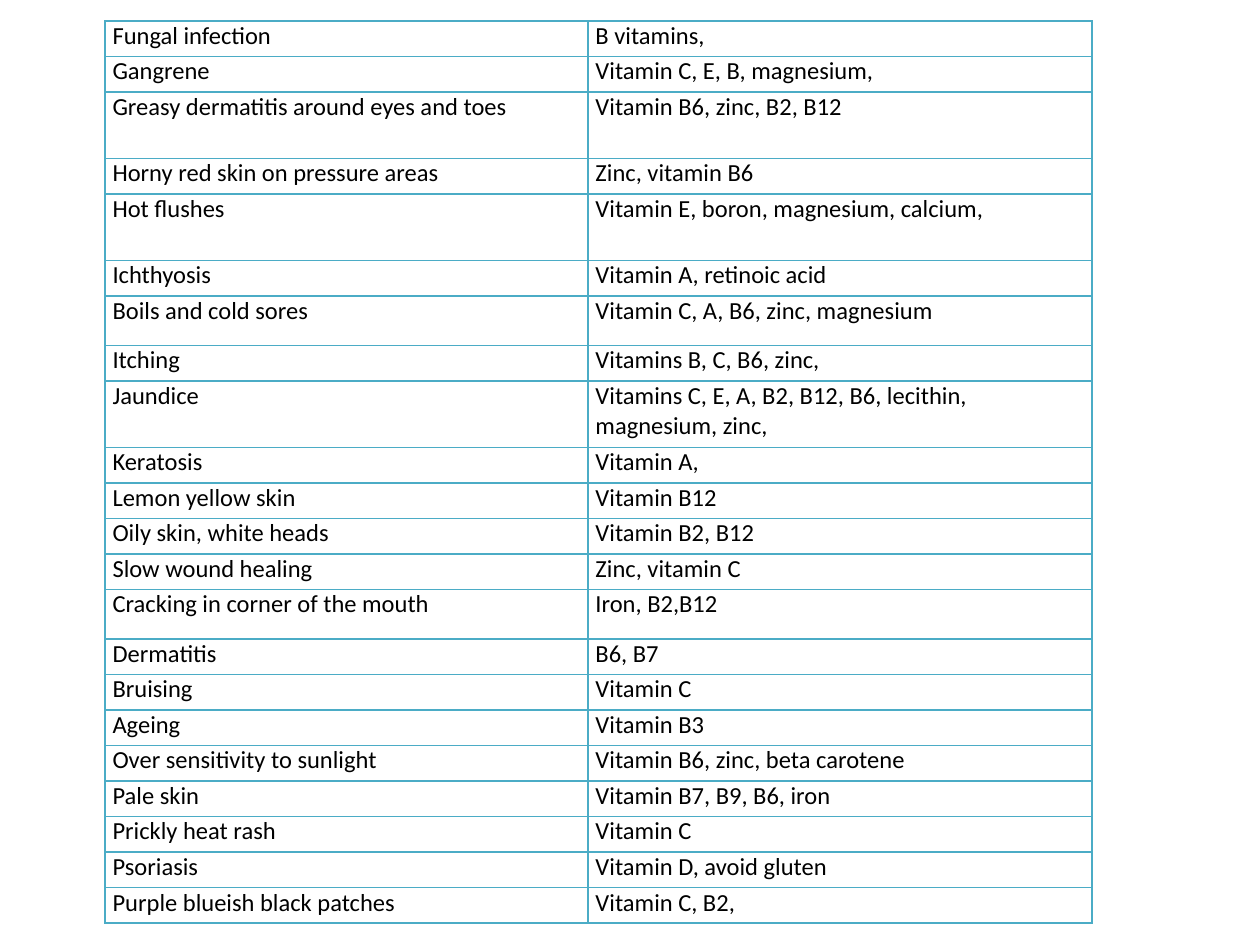
from lxml import etree
from pptx import Presentation
from pptx.dml.color import RGBColor
from pptx.enum.text import MSO_ANCHOR
from pptx.oxml.ns import qn
from pptx.util import Pt

TOP = MSO_ANCHOR.TOP

COLORS = {"text": "000000", "border": "4BACC6"}
FONT = "Calibri"
FONT_SIZE = 14
SIDE_MARGIN = 4.3
COLUMN_WIDTHS = [276, 288]
LOW, MID, TALL = 20.3, 28.3, 38  # row heights

# Condition, nutrients, row height
ROWS = [
    ("Fungal infection", "B vitamins,", LOW),
    ("Gangrene", "Vitamin C, E, B, magnesium,", LOW),
    ("Greasy dermatitis around eyes and toes", "Vitamin B6, zinc, B2, B12", TALL),
    ("Horny red skin on pressure areas", "Zinc, vitamin B6", LOW),
    ("Hot flushes", "Vitamin E, boron, magnesium, calcium,", TALL),
    ("Ichthyosis", "Vitamin A, retinoic acid", LOW),
    ("Boils and cold sores", "Vitamin C, A, B6, zinc, magnesium", MID),
    ("Itching", "Vitamins B, C, B6, zinc,", LOW),
    ("Jaundice", "Vitamins C, E, A, B2, B12, B6, lecithin, magnesium, zinc,", TALL),
    ("Keratosis", "Vitamin A,", LOW),
    ("Lemon yellow skin", "Vitamin B12", LOW),
    ("Oily skin, white heads", "Vitamin B2, B12", LOW),
    ("Slow wound healing", "Zinc, vitamin C", LOW),
    ("Cracking in corner of the mouth", "Iron, B2,B12", MID),
    ("Dermatitis", "B6, B7", LOW),
    ("Bruising", "Vitamin C", LOW),
    ("Ageing", "Vitamin B3", LOW),
    ("Over sensitivity to sunlight", "Vitamin B6, zinc, beta carotene", LOW),
    ("Pale skin", "Vitamin B7, B9, B6, iron", LOW),
    ("Prickly heat rash", "Vitamin C", LOW),
    ("Psoriasis", "Vitamin D, avoid gluten", LOW),
    ("Purple blueish black patches", "Vitamin C, B2,", LOW),
]


def set_borders(cell, color, width):
    """Draw all four cell borders; they must precede the fill in the XML."""
    tcPr = cell._tc.get_or_add_tcPr()
    for i, side in enumerate(("a:lnL", "a:lnR", "a:lnT", "a:lnB")):
        ln = etree.Element(qn(side), w=str(Pt(width)))
        fill = etree.SubElement(ln, qn("a:solidFill"))
        etree.SubElement(fill, qn("a:srgbClr"), val=color)
        tcPr.insert(i, ln)


def fill_cell(cell, text):
    cell.margin_left = cell.margin_right = Pt(SIDE_MARGIN)
    cell.margin_top = cell.margin_bottom = 0
    cell.vertical_anchor = TOP
    cell.fill.background()
    set_borders(cell, COLORS["border"], 1)
    p = cell.text_frame.paragraphs[0]
    p.text = text
    font = p.runs[0].font
    font.name = FONT
    font.size = Pt(FONT_SIZE)
    font.color.rgb = RGBColor.from_string(COLORS["text"])


def add_nutrient_table(s, left, top):
    width = sum(COLUMN_WIDTHS)
    height = sum(row[-1] for row in ROWS)
    table = s.shapes.add_table(len(ROWS), len(COLUMN_WIDTHS), Pt(left), Pt(top),
                               Pt(width), Pt(height)).table
    table.first_row = table.horz_banding = False
    for column, column_width in zip(table.columns, COLUMN_WIDTHS):
        column.width = Pt(column_width)
    for i, (*texts, row_height) in enumerate(ROWS):
        table.rows[i].height = Pt(row_height)
        for j, text in enumerate(texts):
            fill_cell(table.cell(i, j), text)


def main():
    prs = Presentation()
    prs.slide_width, prs.slide_height = Pt(720), Pt(540)
    s = prs.slides.add_slide(prs.slide_layouts[6])
    add_nutrient_table(s, 60, 12)
    prs.save("out.pptx")


if __name__ == "__main__":
    main()
